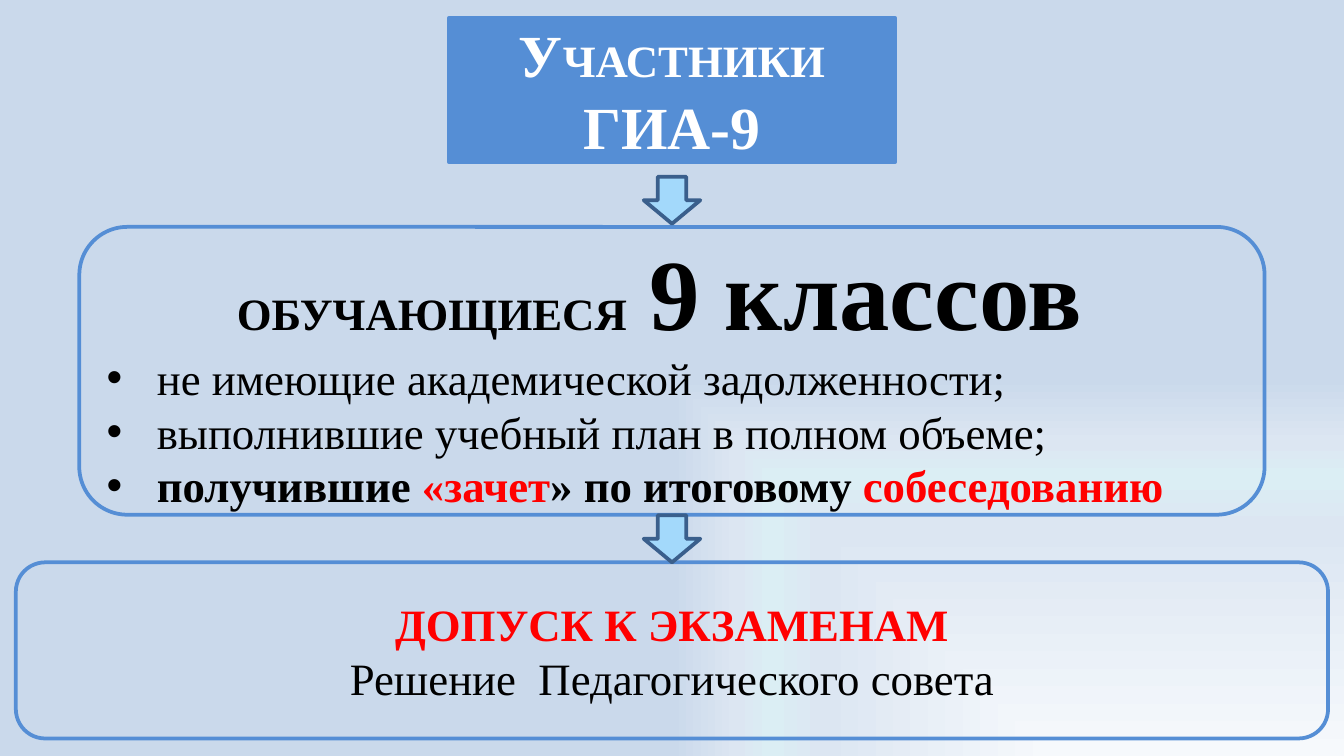
from lxml import etree
from pptx import Presentation
from pptx.dml.color import RGBColor
from pptx.enum.shapes import MSO_SHAPE
from pptx.enum.text import MSO_ANCHOR, MSO_AUTO_SIZE, PP_ALIGN
from pptx.oxml import parse_xml
from pptx.oxml.ns import nsdecls, qn
from pptx.util import Cm, Pt

ROUNDED = MSO_SHAPE.ROUNDED_RECTANGLE
ARROW = MSO_SHAPE.RIGHT_ARROW
MIDDLE = MSO_ANCHOR.MIDDLE
NO_AUTOFIT = MSO_AUTO_SIZE.NONE
CENTER, LEFT = PP_ALIGN.CENTER, PP_ALIGN.LEFT

WHITE = RGBColor(0xFF, 0xFF, 0xFF)
BLACK = RGBColor(0x00, 0x00, 0x00)
RED = RGBColor(0xFF, 0x00, 0x00)
BLUE = RGBColor(0x55, 0x8E, 0xD5)
ARROW_FILL = RGBColor(0xA3, 0xD9, 0xFB)
ARROW_LINE = RGBColor(0x3A, 0x5F, 0x8C)
BACKGROUND_STOPS = [
    (0, RGBColor(0xF6, 0xF9, 0xFC)),
    (60, RGBColor(0xDC, 0xE6, 0xF2)),
    (74, RGBColor(0xDB, 0xEE, 0xF4)),
    (83, RGBColor(0xDC, 0xE6, 0xF2)),
    (100, RGBColor(0xCA, 0xD9, 0xEB)),
]

FONT = "Times New Roman"
SLIDE_WIDTH, SLIDE_HEIGHT = Cm(25.4), Cm(14.29)
BULLET_INDENT = Cm(0.95)


def paint_background(slide):
    """Gradient that spreads from the bottom right corner."""
    fill = slide.background.fill
    fill.gradient()
    stops = "".join(
        f'<a:gs pos="{percent * 1000}"><a:srgbClr val="{color}"/></a:gs>'
        for percent, color in BACKGROUND_STOPS
    )
    gradient = parse_xml(
        f'<a:gradFill {nsdecls("a")} rotWithShape="1"><a:gsLst>{stops}</a:gsLst>'
        '<a:path path="rect"><a:fillToRect l="100000" t="100000"/></a:path></a:gradFill>'
    )
    old_gradient = next(slide.background._cSld.iter(qn("a:gradFill")))
    old_gradient.getparent().replace(old_gradient, gradient)


def outline(shape, color):
    shape.line.color.rgb = color
    shape.line.width = Pt(2)


def add_run(paragraph, text, color=BLACK, size=24, bold=True):
    run = paragraph.add_run()
    run.text = text
    run.font.name = FONT
    run.font.size = Pt(size)
    run.font.bold = bold
    run.font.color.rgb = color


def add_bullet(paragraph):
    properties = paragraph._p.get_or_add_pPr()
    properties.set("marL", str(BULLET_INDENT))
    properties.set("indent", str(-BULLET_INDENT))
    etree.SubElement(properties, qn("a:buFont"), typeface="Arial")
    etree.SubElement(properties, qn("a:buChar"), char="•")


def fill_text(shape, paragraphs):
    """Each paragraph is (alignment, bulleted, runs)."""
    frame = shape.text_frame
    frame.word_wrap = True
    frame.auto_size = NO_AUTOFIT
    frame.vertical_anchor = MIDDLE
    for index, (alignment, bulleted, runs) in enumerate(paragraphs):
        paragraph = frame.add_paragraph() if index else frame.paragraphs[0]
        paragraph.alignment = alignment
        if bulleted:
            add_bullet(paragraph)
        for run in runs:
            add_run(paragraph, *run)


def place_title(slide, left, top, width, height):
    title = slide.shapes.title
    title.left, title.top, title.width, title.height = left, top, width, height
    # Rounded outline for the placeholder
    title._element.spPr.append(parse_xml(
        f'<a:prstGeom {nsdecls("a")} prst="roundRect"><a:avLst>'
        '<a:gd name="adj" fmla="val 46500"/></a:avLst></a:prstGeom>'
    ))
    title.fill.solid()
    title.fill.fore_color.rgb = BLUE
    outline(title, BLUE)
    fill_text(title, [
        (CENTER, False, [("У", WHITE, 32), ("ЧАСТНИКИ ", WHITE), ("ГИА-9", WHITE, 32)]),
    ])


def add_frame(slide, box, paragraphs):
    frame = slide.shapes.add_shape(ROUNDED, *box)
    frame.shadow.inherit = False
    frame.fill.background()
    outline(frame, BLUE)
    fill_text(frame, paragraphs)


def add_students(slide, *box):
    add_frame(slide, box, [
        (CENTER, False, [("ОБУЧАЮЩИЕСЯ  ",), ("9 классов ", BLACK, 54)]),
        (LEFT, True, [("не имеющие академической задолженности;", BLACK, 24, False)]),
        (LEFT, True, [("выполнившие учебный план в полном объеме;", BLACK, 24, False)]),
        (LEFT, True, [
            ("получившие ",),
            ("«зачет", RED),
            ("» по итоговому ",),
            ("собеседованию", RED),
        ]),
    ])


def add_admission(slide, *box):
    add_frame(slide, box, [
        (CENTER, False, [("ДОПУСК К ЭКЗАМЕНАМ", RED)]),
        (CENTER, False, [("Решение  Педагогического совета", BLACK, 24, False)]),
    ])


def add_down_arrow(slide, top):
    length, breadth = Cm(0.89), Cm(1.07)
    arrow = slide.shapes.add_shape(
        ARROW, (SLIDE_WIDTH - length) // 2, top, length, breadth)
    arrow.rotation = 90
    arrow.shadow.inherit = False
    arrow.fill.solid()
    arrow.fill.fore_color.rgb = ARROW_FILL
    outline(arrow, ARROW_LINE)


def main():
    presentation = Presentation()
    presentation.slide_width = SLIDE_WIDTH
    presentation.slide_height = SLIDE_HEIGHT
    title_only = presentation.slide_layouts[5]
    slide = presentation.slides.add_slide(title_only)

    paint_background(slide)
    place_title(slide, Cm(8.48), Cm(0.34), Cm(8.44), Cm(2.72))
    add_students(slide, Cm(1.5), Cm(4.29), Cm(22.4), Cm(5.44))
    add_down_arrow(slide, Cm(3.25))
    add_admission(slide, Cm(0.3), Cm(10.63), Cm(24.8), Cm(3.33))
    add_down_arrow(slide, Cm(9.65))

    presentation.save("out.pptx")


if __name__ == "__main__":
    main()
